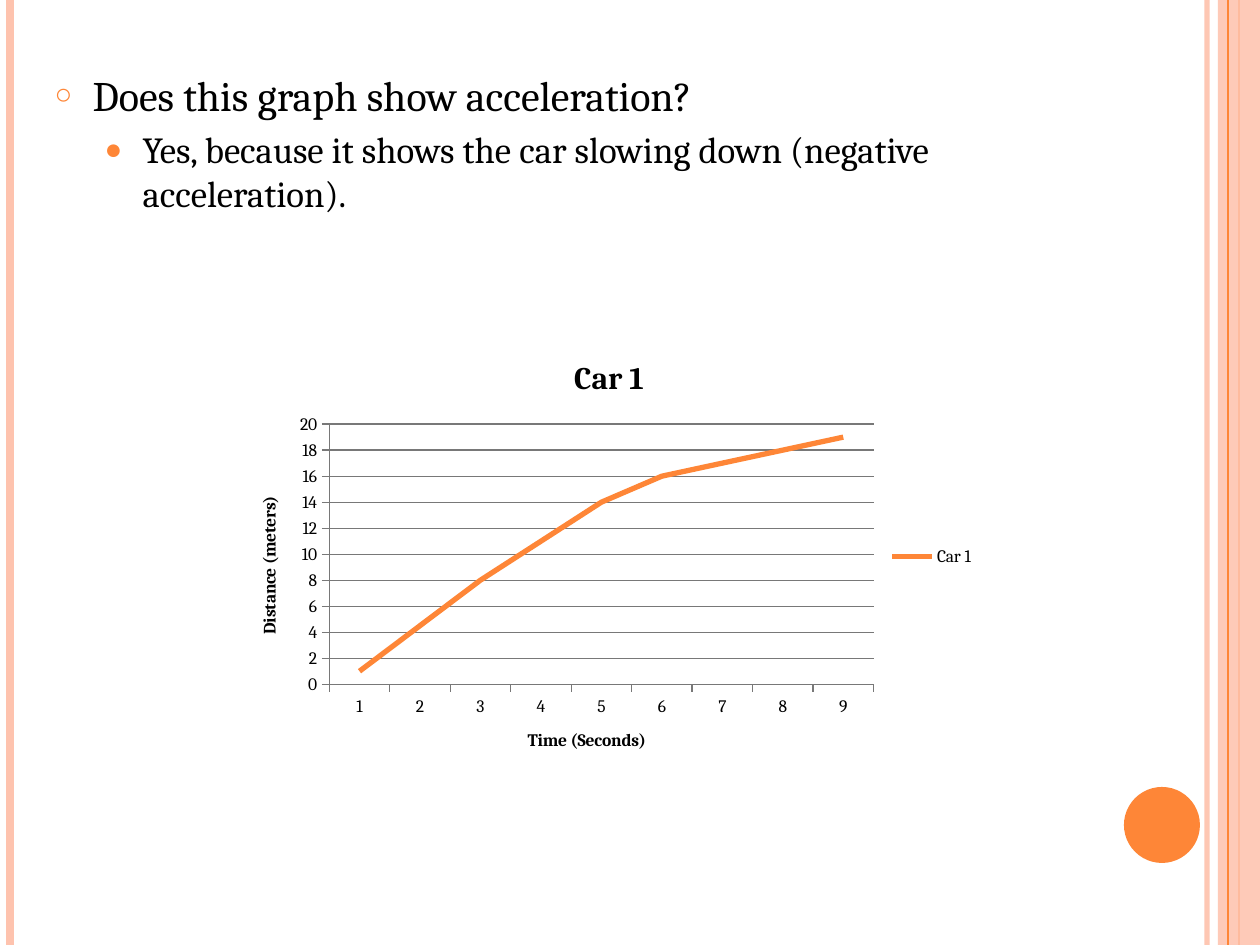
from lxml.etree import SubElement
from pptx import Presentation
from pptx.chart.data import CategoryChartData
from pptx.dml.color import RGBColor
from pptx.enum.chart import XL_CHART_TYPE as ChartType, XL_LEGEND_POSITION as LegendPosition
from pptx.enum.chart import XL_TICK_MARK as TickMark
from pptx.enum.shapes import MSO_CONNECTOR as Connector, MSO_SHAPE as Shape
from pptx.enum.text import MSO_ANCHOR as Anchor, MSO_AUTO_SIZE as AutoSize
from pptx.oxml import parse_xml
from pptx.oxml.ns import nsdecls, qn
from pptx.util import Pt

PX = 7257
WIDTH, HEIGHT = 1260, 945
FONT = "Cambria"
COLORS = {"orange": "FE8637", "peach": "FEC3AE", "text": "000000", "axis": "787878"}


def px(*lengths):
    return [length * PX for length in lengths]


def color(name):
    return RGBColor.from_string(COLORS[name])


def set_alpha(part, percent):
    fill_color = next(part.iter(qn("a:srgbClr")))
    SubElement(fill_color, qn("a:alpha"), val=str(percent * 1000))


def add_stripe(slide, x, tone, weight, alpha=None):
    stripe = slide.shapes.add_connector(Connector.STRAIGHT, *px(x, 0, x, HEIGHT))
    stripe.line.color.rgb = color(tone)
    stripe.line.width = Pt(weight)
    properties = stripe.line._get_or_add_ln().getparent()
    SubElement(properties, qn("a:effectLst"))
    if alpha:
        set_alpha(properties, alpha)


def add_panel(slide, kind, box, tone, alpha=None):
    panel = slide.shapes.add_shape(kind, *px(*box))
    panel.shadow.inherit = False
    panel.fill.solid()
    panel.fill.fore_color.rgb = color(tone)
    panel.line.fill.background()
    if alpha:
        set_alpha(panel.fill._xPr, alpha)


def style_font(font, size, bold=False):
    font.name = FONT
    font.size = Pt(size)
    font.bold = bold
    font.color.rgb = color("text")


def add_bullet(paragraph, text, size, level, before, indent, mark, mark_size):
    paragraph.level = level
    paragraph.space_before = Pt(before)
    run = paragraph.add_run()
    run.text = text
    style_font(run.font, size)
    properties = paragraph._p.get_or_add_pPr()
    properties.set("marL", str(indent * PX))
    properties.set("indent", str(-38 * PX))
    bullet_color = SubElement(properties, qn("a:buClr"))
    SubElement(bullet_color, qn("a:srgbClr"), val=COLORS["orange"])
    SubElement(properties, qn("a:buSzPct"), val=str(mark_size * 1000))
    SubElement(properties, qn("a:buFont"), typeface="Arial")
    SubElement(properties, qn("a:buChar"), char=mark)


def fill_answer(body):
    body.left, body.top, body.width, body.height = px(42, 63, 1092, 210)
    frame = body.text_frame
    frame.word_wrap = True
    frame.auto_size = AutoSize.NONE
    frame.vertical_anchor = Anchor.TOP
    add_bullet(frame.paragraphs[0], "Does this graph show acceleration?",
               24, 0, 6, 38, "○", 70)
    add_bullet(frame.add_paragraph(),
               "Yes, because it shows the car slowing down (negative acceleration).",
               21, 1, 4.2, 88, "●", 80)


def set_title(owner, text, size):
    run = owner.text_frame.paragraphs[0].add_run()
    run.text = text
    style_font(run.font, size, bold=True)


def style_axis(axis, title):
    set_title(axis.axis_title, title, 10)
    axis.major_tick_mark = TickMark.OUTSIDE
    axis.minor_tick_mark = TickMark.NONE
    style_font(axis.tick_labels.font, 10)
    axis.format.line.color.rgb = color("axis")
    axis.format.line.width = Pt(0.75)


def place_plot(chart, x, y, w, h):
    plot_area = chart._chartSpace.chart.plotArea
    for old_layout in plot_area.findall(qn("c:layout")):
        plot_area.remove(old_layout)
    plot_area.insert(0, parse_xml(
        f'<c:layout {nsdecls("c")}><c:manualLayout><c:layoutTarget val="inner"/>'
        '<c:xMode val="edge"/><c:yMode val="edge"/>'
        f'<c:x val="{x}"/><c:y val="{y}"/><c:w val="{w}"/><c:h val="{h}"/>'
        '</c:manualLayout></c:layout>'))


def add_distance_chart(slide):
    data = CategoryChartData()
    data.categories = [str(second) for second in range(1, 10)]
    data.add_series("Car 1", [1, 4.5, 8, 11, 14, 16, 17, 18, 19])
    chart = slide.shapes.add_chart(ChartType.LINE, *px(231, 336, 756, 441), data).chart
    style_font(chart.font, 10)
    set_title(chart.chart_title, "Car 1", 18)
    chart.chart_title.include_in_layout = False
    chart.has_legend = True
    chart.legend.position = LegendPosition.RIGHT
    chart.legend.include_in_layout = False
    style_font(chart.legend.font, 10)
    style_axis(chart.category_axis, "Time (Seconds)")
    distance = chart.value_axis
    style_axis(distance, "Distance (meters)")
    distance.minimum_scale, distance.maximum_scale, distance.major_unit = 0, 20, 2
    distance.has_major_gridlines = True
    distance.major_gridlines.format.line.color.rgb = color("axis")
    distance.major_gridlines.format.line.width = Pt(0.75)
    chart.plots[0].vary_by_categories = False
    car = chart.plots[0].series[0]
    car.smooth = False
    car.format.line.color.rgb = color("orange")
    car.format.line.width = Pt(3)
    place_plot(chart, 0.13, 0.2, 0.72, 0.59)


def main():
    deck = Presentation()
    deck.slide_width, deck.slide_height = px(WIDTH, HEIGHT)
    slide = deck.slides.add_slide(deck.slide_layouts[1])
    heading = slide.shapes.title.element
    heading.getparent().remove(heading)
    add_stripe(slide, 1207, "peach", 3, 93)
    add_stripe(slide, 10, "peach", 4.5)
    add_stripe(slide, 1239, "orange", 1.5)
    add_panel(slide, Shape.RECTANGLE, (1218, 0, 42, HEIGHT), "peach", 87)
    add_stripe(slide, 1228, "orange", 0.75)
    add_panel(slide, Shape.OVAL, (1124, 787, 76, 76), "orange")
    fill_answer(slide.placeholders[1])
    add_distance_chart(slide)
    deck.save("out.pptx")


if __name__ == "__main__":
    main()
